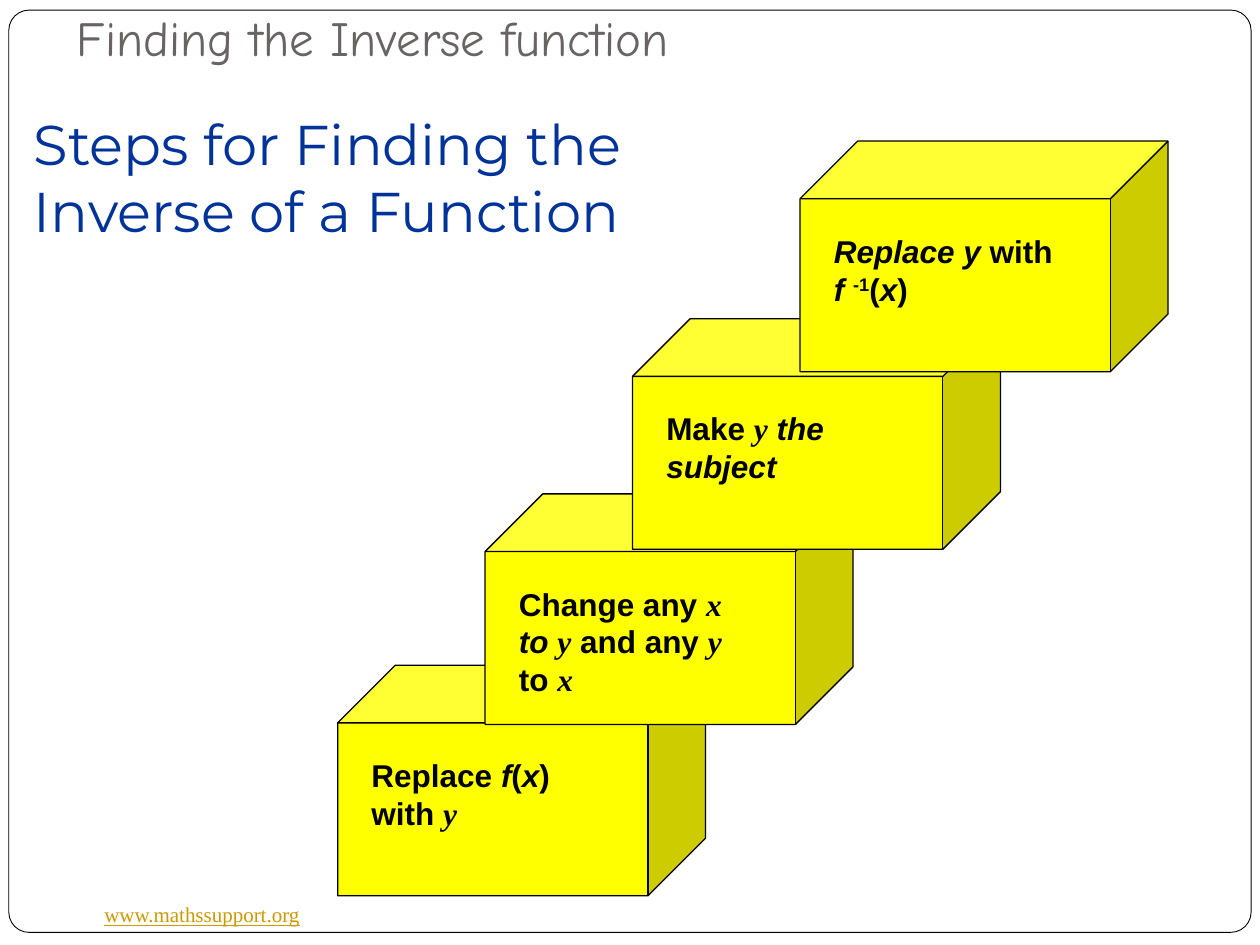
from pptx import Presentation
from pptx.dml.color import RGBColor
from pptx.enum.shapes import MSO_SHAPE
from pptx.enum.text import MSO_ANCHOR, PP_ALIGN
from pptx.util import Inches, Pt

ROUNDED = MSO_SHAPE.ROUNDED_RECTANGLE
CUBE = MSO_SHAPE.CUBE
MIDDLE = MSO_ANCHOR.MIDDLE
LEFT = PP_ALIGN.LEFT
SERIF = "Times New Roman"


def color(value):
    return RGBColor.from_string(value)


def add_text(para, text, size=18, font="Arial", fill="000000", bold=False,
             italic=False, underline=False, raised=False):
    span = para.add_run()
    span.text = text
    span.font.size = Pt(size)
    span.font.name = font
    span.font.color.rgb = color(fill)
    span.font.bold = bold
    span.font.italic = italic
    span.font.underline = underline
    if raised:
        span.font._element.set("baseline", "30000")


deck = Presentation()
deck.slide_width = Inches(10)
deck.slide_height = Inches(7.5)
page = deck.slides.add_slide(deck.slide_layouts[5])

frame = page.shapes.add_shape(ROUNDED, Inches(0.07), Inches(0.08), Inches(9.86), Inches(7.32))
frame.adjustments[0] = 0.022
frame.shadow.inherit = False
frame.fill.solid()
frame.fill.fore_color.rgb = color("FFFFFF")
frame.line.color.rgb = color("000000")
frame.line.width = Pt(0.5)

website = page.shapes.add_textbox(Inches(0.73), Inches(7.11), Inches(1.77), Inches(0.3))
website.text_frame.word_wrap = False
add_text(website.text_frame.paragraphs[0], "www.mathssupport.org", size=12,
         font=SERIF, fill="CC9900", underline=True)

heading = page.shapes.add_textbox(Inches(0.17), Inches(0.82), Inches(5.43), Inches(1.18))
heading.text_frame.word_wrap = True
add_text(heading.text_frame.paragraphs[0], "Steps for Finding the Inverse of a Function",
         size=32, font="Montserrat", fill="003399")

plain = {}
slanted = {"italic": True}
variable = {"italic": True, "font": SERIF}
steps = [
    (2.68, 5.28, [("Replace ", plain), ("f", slanted), ("(", plain), ("x", slanted),
                  (") with ", plain), ("y", variable)]),
    (3.85, 3.92, [("Change any ", plain), ("x", variable), (" to ", slanted),
                  ("y", variable), (" and any ", plain), ("y", variable),
                  (" to ", plain), ("x", variable)]),
    (5.02, 2.53, [("Make ", plain), ("y", variable), (" the subject", slanted)]),
    (6.35, 1.12, [("Replace y", slanted), (" with ", plain), ("f ", slanted),
                  ("-1", {"raised": True}), ("(", plain), ("x", slanted), (")", plain)]),
]
for left, top, pieces in steps:
    step = page.shapes.add_group_shape()
    cube = step.shapes.add_shape(CUBE, Inches(left), Inches(top), Inches(2.92), Inches(1.83))
    cube.adjustments[0] = 0.25
    cube.shadow.inherit = False
    cube.fill.solid()
    cube.fill.fore_color.rgb = color("FFFF00")
    cube.line.color.rgb = color("000000")
    cube.line.width = Pt(0.75)

    box = step.shapes.add_textbox(Inches(left + 0.17), Inches(top + 0.67), Inches(2), Inches(0.71))
    box.text_frame.word_wrap = True
    for text, style in pieces:
        add_text(box.text_frame.paragraphs[0], text, bold=True, **style)

title = page.shapes.title
title.left, title.top = Inches(0.51), Inches(0.05)
title.width, title.height = Inches(9), Inches(0.54)
title.text_frame.vertical_anchor = MIDDLE
para = title.text_frame.paragraphs[0]
para.alignment = LEFT
para.line_spacing = 0.9
add_text(para, "Finding the Inverse function", size=28, font="Comic Neue", fill="696464")
page.shapes._spTree.append(title._element)

deck.save("out.pptx")
